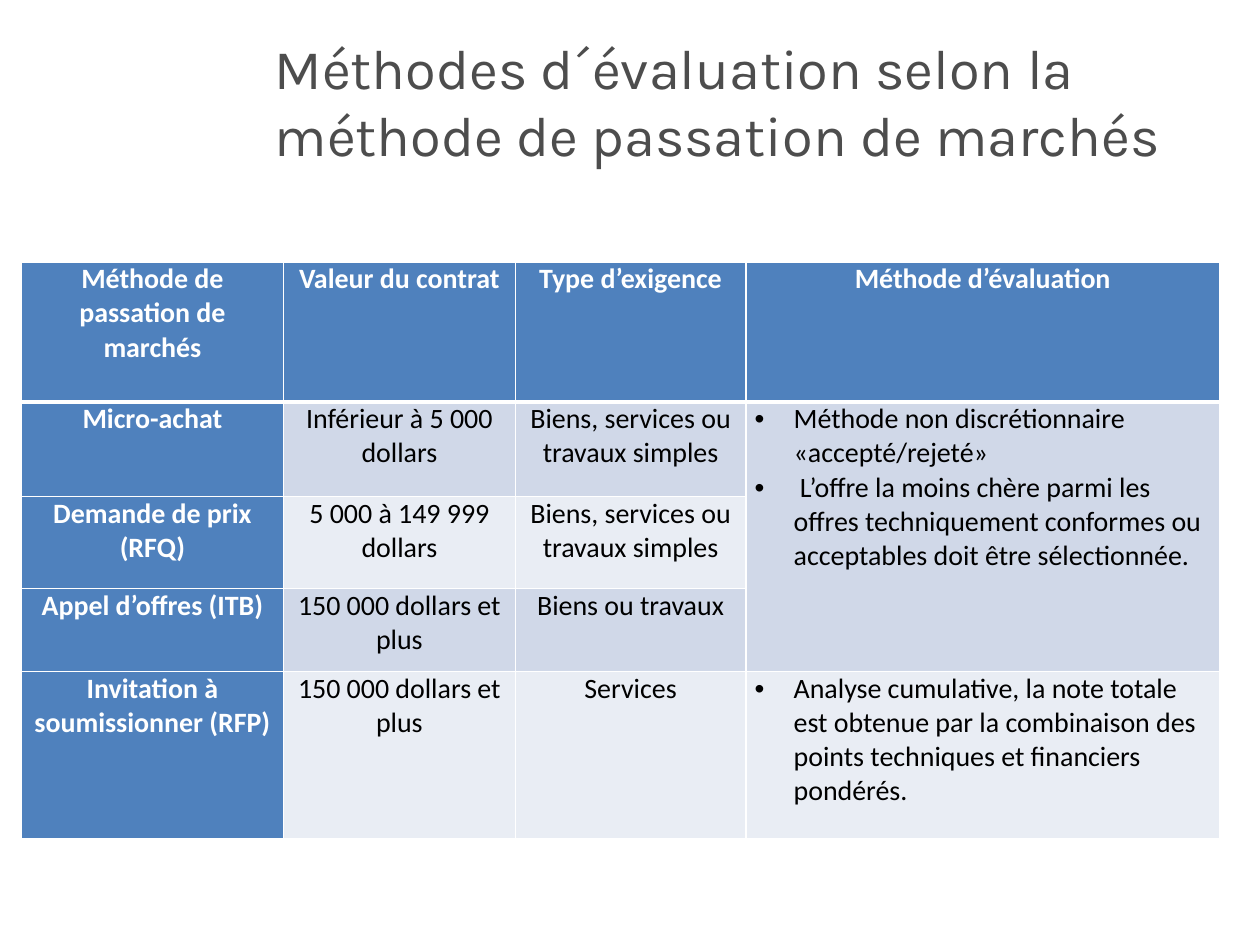
import pptx
import pptx.dml.color
import pptx.enum.text
import pptx.oxml.ns
import pptx.util
from lxml import etree

Inches = pptx.util.Inches
Pt = pptx.util.Pt

COLORS = {
    "title": "4D4D4D",
    "header": "4F81BD",
    "band_dark": "D0D8E8",
    "band_light": "E9EDF4",
    "text": "000000",
    "white": "FFFFFF",
}
COLUMN_WIDTHS = [2.08, 1.84, 1.83, 3.76]
ROW_HEIGHTS = [1.11, 0.75, 0.73, 0.66, 1.33]
EVALUATION_COLUMN = 3
ROWS = [
    ["Méthode de passation de marchés", "Valeur du contrat", "Type d’exigence", "Méthode d’évaluation"],
    [
        "Micro-achat",
        "Inférieur à 5 000 dollars",
        "Biens, services ou travaux simples",
        "Méthode non discrétionnaire «accepté/rejeté»\n"
        " L’offre la moins chère parmi les offres techniquement conformes ou acceptables doit être sélectionnée.",
    ],
    ["Demande de prix (RFQ)", "5 000 à 149 999 dollars", "Biens, services ou travaux simples", ""],
    ["Appel d’offres (ITB)", "150 000 dollars et plus", "Biens ou travaux", ""],
    [
        "Invitation à soumissionner (RFP)",
        "150 000 dollars et plus",
        "Services",
        "Analyse cumulative, la note totale est obtenue par la combinaison des points techniques et financiers pondérés.",
    ],
]


def color(name):
    return pptx.dml.color.RGBColor.from_string(COLORS[name])


def add_element(parent, tag, **attributes):
    return etree.SubElement(parent, pptx.oxml.ns.qn(tag), **attributes)


def format_text(paragraph, font_name, size, color_name, bold=False):
    for run in paragraph.runs:
        run.font.name = font_name
        run.font.size = Pt(size)
        run.font.bold = bold
        run.font.color.rgb = color(color_name)


def add_bullet(paragraph):
    properties = paragraph._p.get_or_add_pPr()
    properties.set("marL", str(Inches(0.31)))
    properties.set("indent", str(Inches(-0.31)))
    add_element(properties, "a:buFont", typeface="Arial")
    add_element(properties, "a:buChar", char="•")


def set_borders(cell, row):
    widths = {"L": 1, "R": 1, "T": 3 if row == 1 else 1, "B": 3 if row == 0 else 1}
    properties = cell._tc.get_or_add_tcPr()
    for side, width in widths.items():
        line = add_element(properties, f"a:ln{side}", w=str(Pt(width)))
        fill = add_element(line, "a:solidFill")
        add_element(fill, "a:srgbClr", val=COLORS["white"])


def fill_cell(cell, text, row, column):
    is_heading = row == 0 or column == 0
    band = "band_dark" if row % 2 else "band_light"
    set_borders(cell, row)
    cell.fill.solid()
    cell.fill.fore_color.rgb = color("header" if is_heading else band)
    cell.margin_left = cell.margin_right = Inches(0.07)
    cell.margin_top = cell.margin_bottom = 0
    cell.text_frame.text = text
    for paragraph in cell.text_frame.paragraphs:
        if column == EVALUATION_COLUMN and not is_heading:
            if text:
                add_bullet(paragraph)
        else:
            paragraph.alignment = pptx.enum.text.PP_ALIGN.CENTER
        format_text(paragraph, "Calibri", 16, "white" if is_heading else "text", is_heading)


def add_title(slide):
    title = slide.shapes.title
    title.left, title.top = Inches(2.08), Inches(0.51)
    title.width, title.height = Inches(7.32), Inches(0.58)
    text_frame = title.text_frame
    text_frame.text = "Méthodes d´évaluation selon la méthode de passation de marchés"
    text_frame.word_wrap = True
    text_frame.auto_size = pptx.enum.text.MSO_AUTO_SIZE.NONE
    text_frame.vertical_anchor = pptx.enum.text.MSO_ANCHOR.MIDDLE
    paragraph = text_frame.paragraphs[0]
    paragraph.alignment = pptx.enum.text.PP_ALIGN.LEFT
    format_text(paragraph, "Karla", 32, "title")


def add_methods_table(slide):
    table = slide.shapes.add_table(
        len(ROWS), len(COLUMN_WIDTHS), Inches(0.17), Inches(2.08),
        Inches(sum(COLUMN_WIDTHS)), Inches(sum(ROW_HEIGHTS)),
    ).table
    for column, width in zip(table.columns, COLUMN_WIDTHS):
        column.width = Inches(width)
    for row, height in zip(table.rows, ROW_HEIGHTS):
        row.height = Inches(height)
    for row, texts in enumerate(ROWS):
        for column, text in enumerate(texts):
            fill_cell(table.cell(row, column), text, row, column)
    table.cell(1, EVALUATION_COLUMN).merge(table.cell(3, EVALUATION_COLUMN))


def main():
    presentation = pptx.Presentation()
    presentation.slide_width = Inches(10)
    presentation.slide_height = Inches(7.5)
    slide = presentation.slides.add_slide(presentation.slide_layouts[5])
    add_title(slide)
    add_methods_table(slide)
    presentation.save("out.pptx")


if __name__ == "__main__":
    main()
